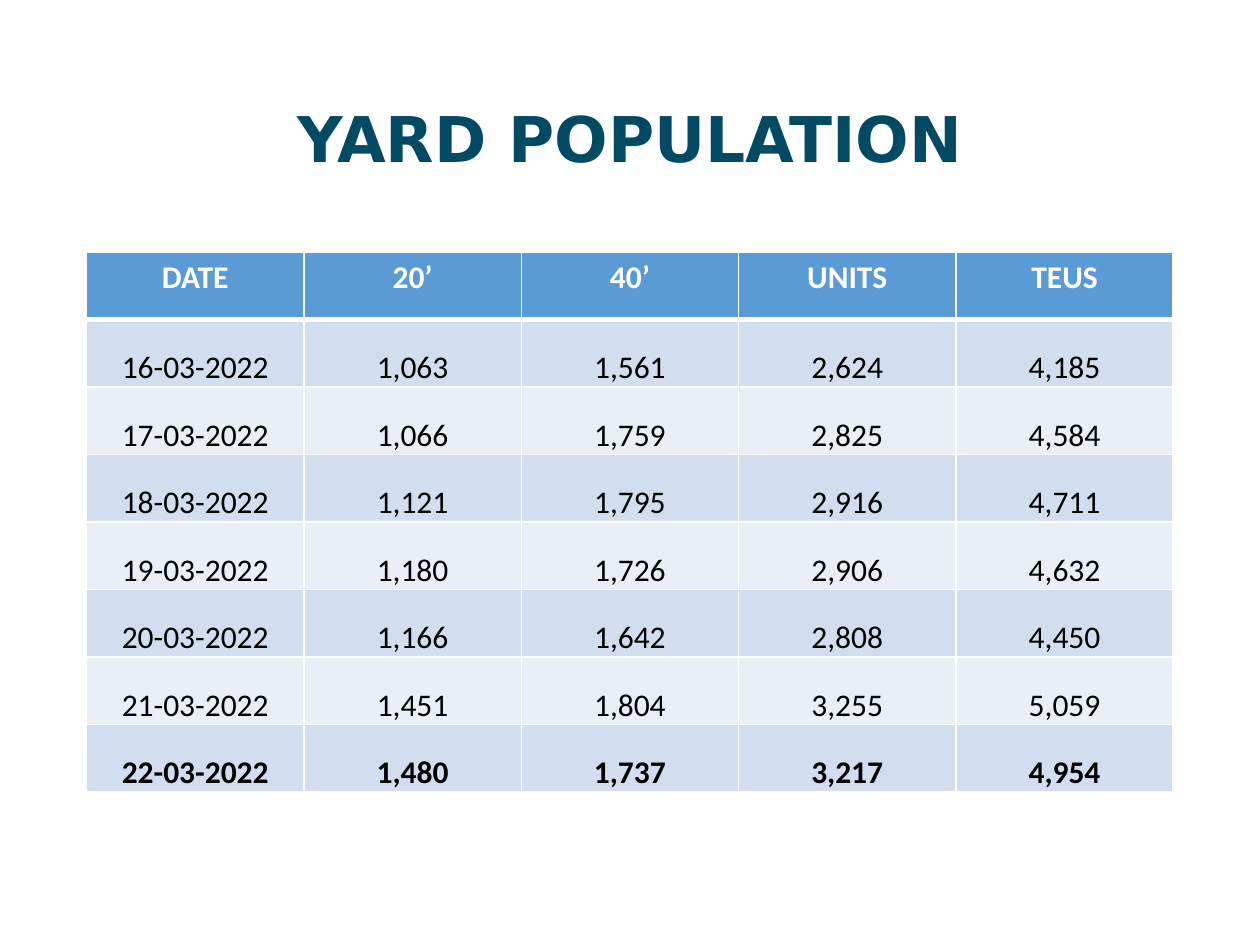
import pptx
import pptx.util
import pptx.dml.color
import pptx.enum.text
import pptx.oxml.ns
from lxml import etree

Pt = pptx.util.Pt
RGB = pptx.dml.color.RGBColor.from_string
PP_ALIGN = pptx.enum.text.PP_ALIGN
ANCHOR = pptx.enum.text.MSO_ANCHOR
qn = pptx.oxml.ns.qn

COLORS = {
    "title": "004A64",
    "header": "5B9BD5",
    "band_dark": "D2DEEF",
    "band_light": "EAEFF7",
    "white": "FFFFFF",
    "black": "000000",
}
ROWS = [
    ["DATE", "20’", "40’", "UNITS", "TEUS"],
    ["16-03-2022", "1,063", "1,561", "2,624", "4,185"],
    ["17-03-2022", "1,066", "1,759", "2,825", "4,584"],
    ["18-03-2022", "1,121", "1,795", "2,916", "4,711"],
    ["19-03-2022", "1,180", "1,726", "2,906", "4,632"],
    ["20-03-2022", "1,166", "1,642", "2,808", "4,450"],
    ["21-03-2022", "1,451", "1,804", "3,255", "5,059"],
    ["22-03-2022", "1,480", "1,737", "3,217", "4,954"],
]
LEFT, WIDTH = 49.5, 621
TABLE_TOP, TABLE_HEIGHT = 144, 308.8


def format_text(p, font, size, color, bold):
    p.alignment = PP_ALIGN.CENTER
    for r in p.runs:
        r.font.name = font
        r.font.size = Pt(size)
        r.font.bold = bold
        r.font.color.rgb = RGB(color)


def add_border(cell, side, width):
    """Draw a white line on one side (L, R, T, B); call in that order, before the fill."""
    ln = etree.SubElement(cell._tc.get_or_add_tcPr(), qn("a:ln" + side), w=str(Pt(width)))
    fill = etree.SubElement(ln, qn("a:solidFill"))
    etree.SubElement(fill, qn("a:srgbClr"), val=COLORS["white"])


prs = pptx.Presentation()
prs.slide_width, prs.slide_height = Pt(720), Pt(540)
s = prs.slides.add_slide(prs.slide_layouts[5])

# Title
title = s.shapes.title
title.left, title.top, title.width, title.height = Pt(LEFT), Pt(28.8), Pt(WIDTH), Pt(104.4)
tf = title.text_frame
tf.text = "YARD POPULATION"
tf.vertical_anchor = ANCHOR.MIDDLE
tf.paragraphs[0].line_spacing = 0.9
format_text(tf.paragraphs[0], "DejaVu Sans", 36, COLORS["title"], True)

# Table
table = s.shapes.add_table(
    len(ROWS), len(ROWS[0]), Pt(LEFT), Pt(TABLE_TOP), Pt(WIDTH), Pt(TABLE_HEIGHT)
).table
for i, values in enumerate(ROWS):
    header, last = i == 0, i == len(ROWS) - 1
    if header:
        band = COLORS["header"]
    else:
        band = COLORS["band_dark" if i % 2 else "band_light"]
    for j, value in enumerate(values):
        cell = table.cell(i, j)
        cell.text = value
        format_text(
            cell.text_frame.paragraphs[0], "Calibri", 18,
            COLORS["white" if header else "black"], header or last,
        )
        if not header:
            cell.vertical_anchor = ANCHOR.BOTTOM
            cell.margin_left = cell.margin_right = cell.margin_top = Pt(0.75)
            cell.margin_bottom = 0
        add_border(cell, "L", 1)
        add_border(cell, "R", 1)
        add_border(cell, "T", 3 if i == 1 else 1)
        add_border(cell, "B", 3 if header else 1)
        cell.fill.solid()
        cell.fill.fore_color.rgb = RGB(band)

prs.save("out.pptx")
